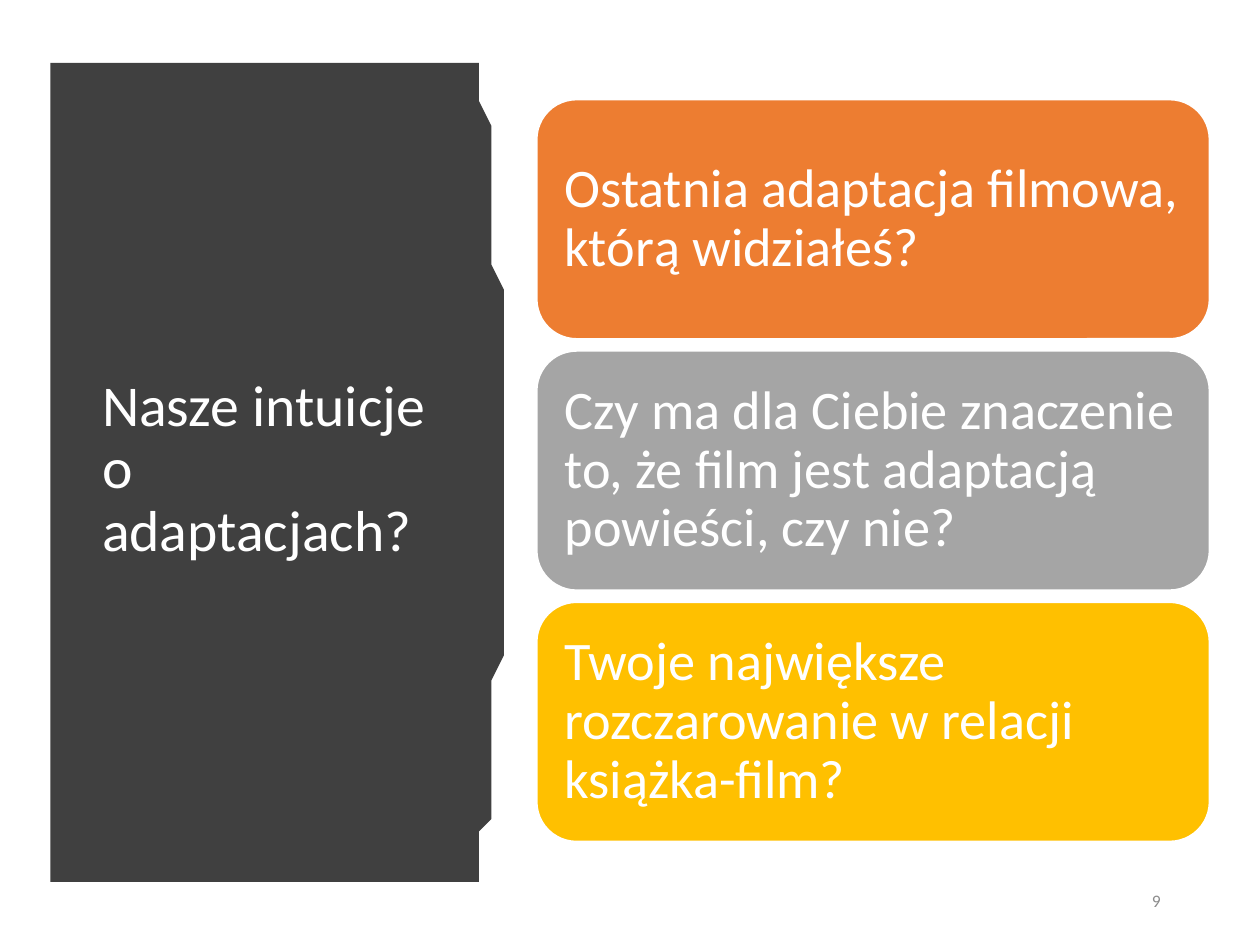
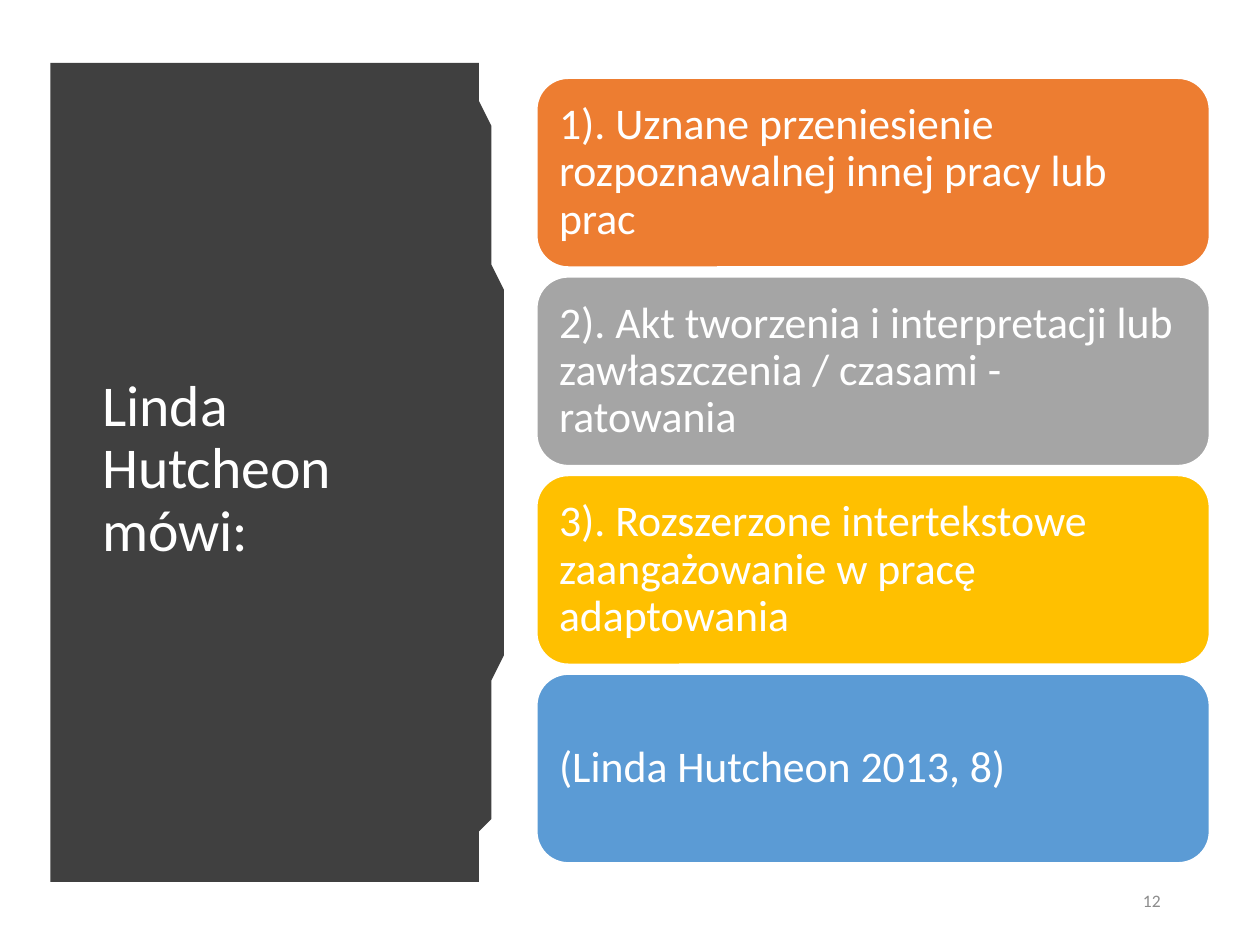
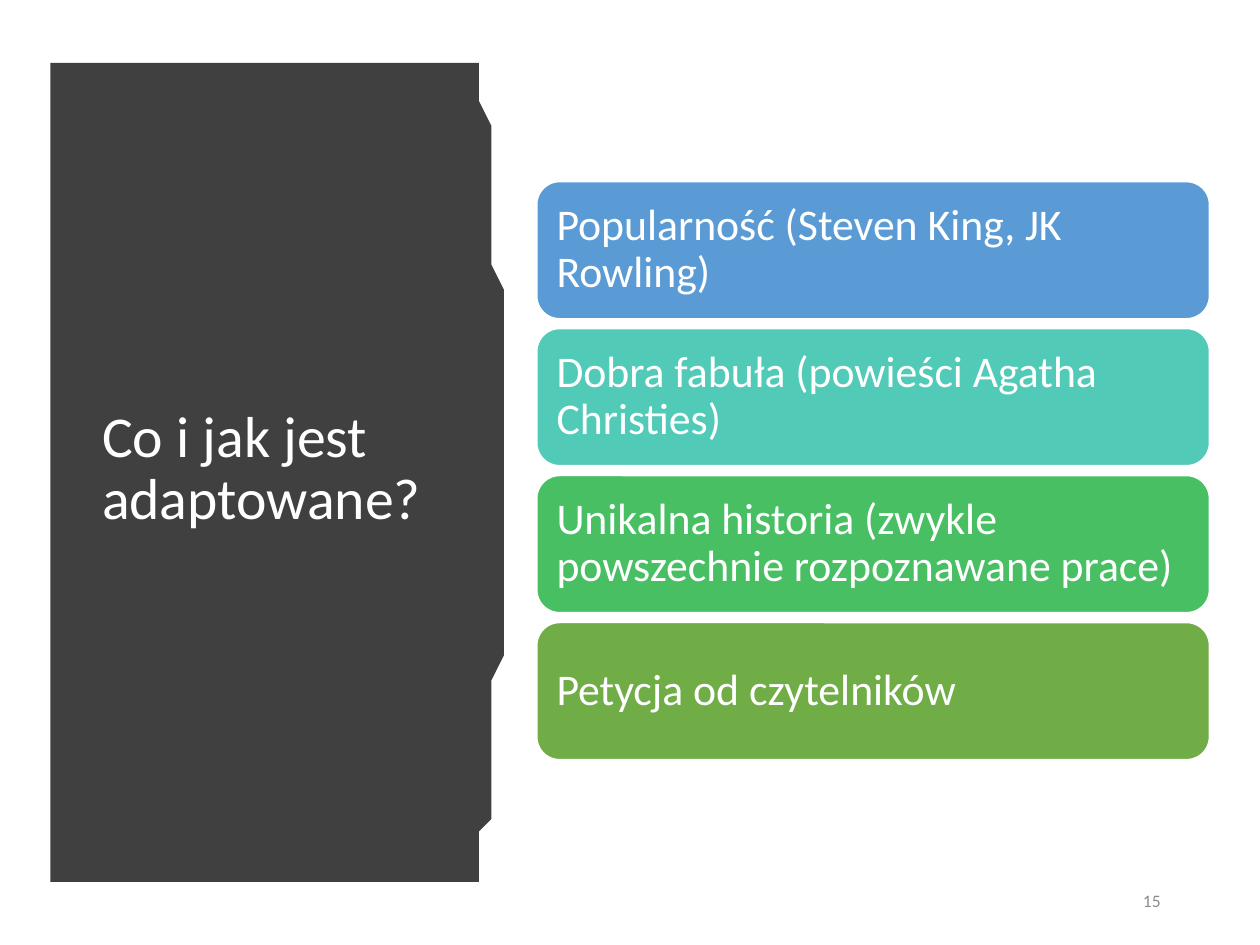
from pptx import Presentation
from pptx.dml.color import RGBColor
from pptx.enum.shapes import MSO_SHAPE as Shape
from pptx.enum.text import MSO_ANCHOR as Anchor, MSO_AUTO_SIZE as AutoSize, PP_ALIGN as Align
from pptx.util import Inches, Pt

COLORS = {
    "panel": "404040", "white": "FFFFFF", "number": "8C8C8C",
    "orange": "ED7D31", "gray": "A5A5A5", "gold": "FFC000", "blue": "5B9BD5",
    "teal": "52CAB8", "green": "49BF64", "olive": "70AD47",
}
FONT = "Calibri"
TITLE_SIZE, NUMBER_SIZE = 33, 10
COLUMNS, ROWS = 100, 75
TITLE_ONLY = 5

PANEL_LEFT, PANEL_TOP, PANEL_EDGE, PANEL_BOTTOM = 4, 5.2, 38.1, 69.6
PANEL_BULGE, CURVE_STEPS = 1.8, 40
TITLE_BOX = (7.1, 11.1, 28, 52.4)
NUMBER_BOX = (88, 69.5, 5.1, 4)
CARD_LEFT, CARD_WIDTH, STACK_CENTER = 42.6, 53.4, 37.35
CARD_GAP, CARD_INSET = 0.22, 0.3  # shares of the card's text size

SLIDES = [
    {"title": "Nasze intuicje o adaptacjach?", "number": 9, "size": 31, "height": 19,
     "cards": [
         ("orange", "Ostatnia adaptacja filmowa, którą widziałeś?"),
         ("gray", "Czy ma dla Ciebie znaczenie to, że film jest adaptacją powieści, czy nie?"),
         ("gold", "Twoje największe rozczarowanie w relacji książka-film?"),
     ]},
    {"title": "Linda Hutcheon mówi:", "number": 12, "size": 25, "height": 15,
     "cards": [
         ("orange", "1). Uznane przeniesienie rozpoznawalnej innej pracy lub prac"),
         ("gray", "2). Akt tworzenia i interpretacji lub zawłaszczenia / czasami - ratowania"),
         ("gold", "3). Rozszerzone intertekstowe zaangażowanie w pracę adaptowania"),
         ("blue", "(Linda Hutcheon 2013, 8)"),
     ]},
    {"title": "Co i jak jest adaptowane?", "number": 15, "size": 25, "height": 10.9,
     "cards": [
         ("blue", "Popularność (Steven King, JK Rowling)"),
         ("teal", "Dobra fabuła (powieści Agatha Christies)"),
         ("green", "Unikalna historia (zwykle powszechnie rozpoznawane prace)"),
         ("olive", "Petycja od czytelników"),
     ]},
]


def color(name):
    return RGBColor.from_string(COLORS[name])


class SlideBuilder:
    def __init__(self, deck):
        self.deck = deck
        self.column = deck.slide_width / COLUMNS
        self.row = deck.slide_height / ROWS
        self.slide = None

    def start_slide(self):
        self.slide = self.deck.slides.add_slide(self.deck.slide_layouts[TITLE_ONLY])

    def place(self, left, top, width, height):
        """Turn grid columns and rows into slide lengths."""
        return (round(left * self.column), round(top * self.row),
                round(width * self.column), round(height * self.row))

    def set_text(self, shape, text, size, ink="white", align=Align.LEFT, spacing=1.0):
        frame = shape.text_frame
        frame.text = text
        frame.word_wrap = True
        frame.auto_size = AutoSize.NONE
        frame.vertical_anchor = Anchor.MIDDLE
        para = frame.paragraphs[0]
        para.alignment = align
        para.line_spacing = spacing
        font = para.runs[0].font
        font.name, font.size = FONT, Pt(size)
        font.color.rgb = color(ink)

    def add_panel(self):
        """Draw the dark panel with its parabolic right edge behind the title."""
        half = (PANEL_BOTTOM - PANEL_TOP) / 2
        points = []
        for step in range(CURVE_STEPS + 1):
            offset = 2 * step / CURVE_STEPS - 1
            points.append((PANEL_EDGE + PANEL_BULGE * (1 - offset ** 2),
                           PANEL_TOP + half * (1 + offset)))
        points.append((PANEL_LEFT, PANEL_BOTTOM))
        outline = self.slide.shapes.build_freeform(
            PANEL_LEFT, PANEL_TOP, scale=(self.column, self.row))
        outline.add_line_segments(points, close=True)
        panel = outline.convert_to_shape()
        panel.shadow.inherit = False
        panel.fill.solid()
        panel.fill.fore_color.rgb = color("panel")
        panel.line.fill.background()
        self.slide.shapes.title._element.addprevious(panel._element)

    def add_title(self, text):
        title = self.slide.shapes.title
        title.left, title.top, title.width, title.height = self.place(*TITLE_BOX)
        self.set_text(title, text, TITLE_SIZE, spacing=0.9)

    def add_number(self, number):
        box = self.slide.shapes.add_textbox(*self.place(*NUMBER_BOX))
        self.set_text(box, str(number), NUMBER_SIZE, "number", Align.RIGHT)

    def add_card(self, top, height, fill, text, size):
        card = self.slide.shapes.add_shape(
            Shape.ROUNDED_RECTANGLE, *self.place(CARD_LEFT, top, CARD_WIDTH, height))
        card.shadow.inherit = False
        card.fill.solid()
        card.fill.fore_color.rgb = color(fill)
        card.line.color.rgb = color("white")
        card.line.width = Pt(1)
        frame = card.text_frame
        inset = Pt(size * CARD_INSET)
        frame.margin_left = frame.margin_right = inset
        frame.margin_top = frame.margin_bottom = inset
        self.set_text(card, text, size, spacing=0.9)

    def add_cards(self, cards, height, size):
        """Stack the cards with equal gaps around a fixed centre line."""
        pitch = height + Pt(size * CARD_GAP) / self.row
        first = STACK_CENTER - (pitch * (len(cards) - 1) + height) / 2
        for index, (fill, text) in enumerate(cards):
            self.add_card(first + index * pitch, height, fill, text, size)


def main():
    deck = Presentation()
    deck.slide_width, deck.slide_height = Inches(10), Inches(7.5)
    builder = SlideBuilder(deck)
    for content in SLIDES:
        builder.start_slide()
        builder.add_panel()
        builder.add_title(content["title"])
        builder.add_number(content["number"])
        builder.add_cards(content["cards"], content["height"], content["size"])
    deck.save("out.pptx")


if __name__ == "__main__":
    main()
